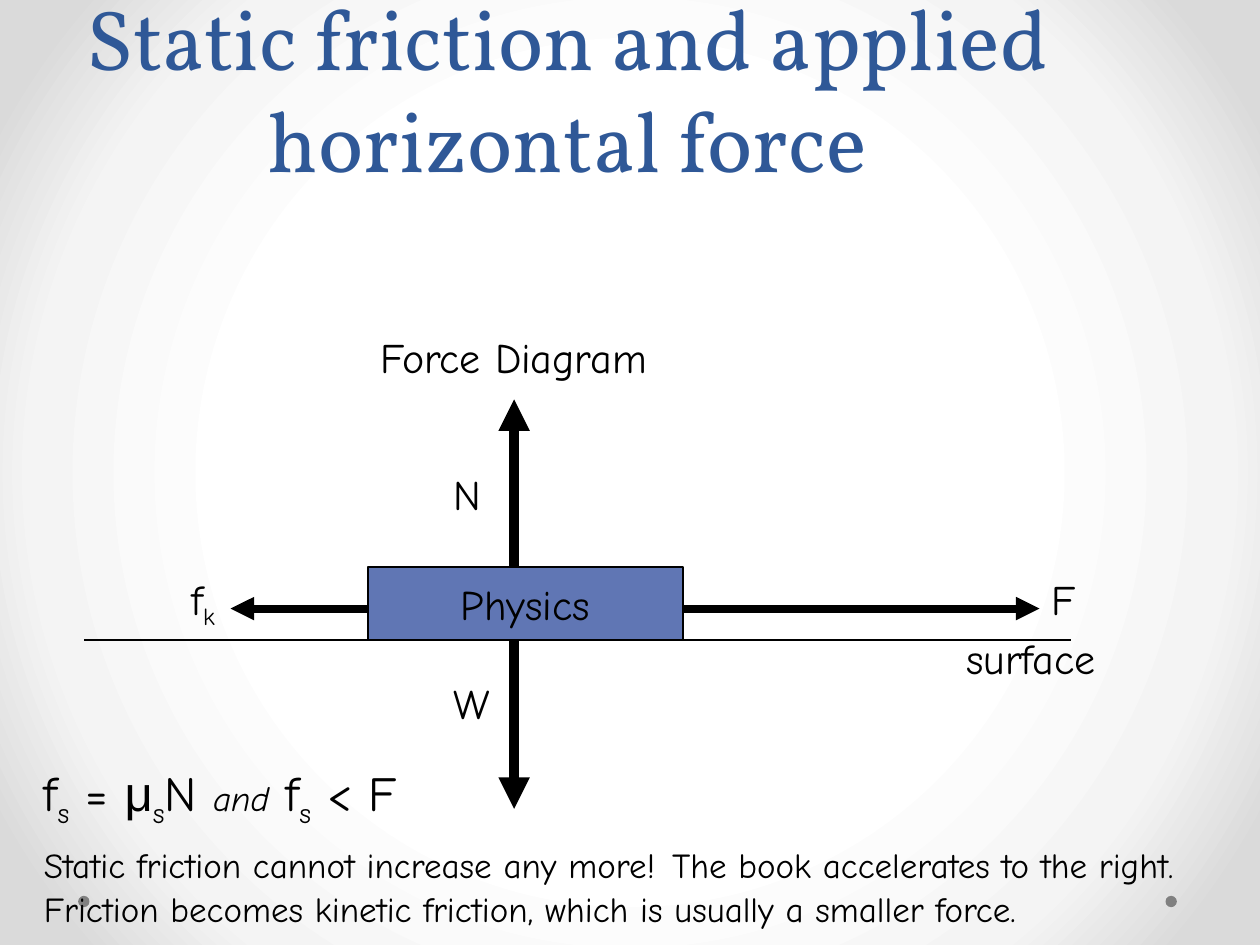
from lxml import etree
from pptx import Presentation
from pptx.dml.color import RGBColor
from pptx.enum.shapes import MSO_CONNECTOR as CONN, MSO_SHAPE as SHAPE
from pptx.enum.text import MSO_ANCHOR as ANCHOR, MSO_AUTO_SIZE as FIT, PP_ALIGN as ALIGN
from pptx.oxml import parse_xml
from pptx.oxml.ns import nsdecls, qn
from pptx.util import Inches, Pt

BLACK = RGBColor(0x00, 0x00, 0x00)
GRAY = RGBColor(0x80, 0x80, 0x80)
TITLE_BLUE = RGBColor(0x2F, 0x58, 0x97)
BOOK_BLUE = RGBColor(0x60, 0x76, 0xB4)
BACKDROP = [(50, "FFFFFF"), (76, "F4F4F4"), (92, "DADADA")]

SURFACE_Y, BOOK_TOP, BOOK_LEFT, BOOK_RIGHT = 5.08, 4.5, 2.92, 5.42
AXIS_X, FORCE_Y = 4.08, 4.83


def add_run(p, text, size=24, font="Comic Neue", color=BLACK, italic=False, sub=False):
    r = p.add_run()
    r.text = text
    r.font.size, r.font.name, r.font.italic = Pt(size), font, italic
    r.font.color.rgb = color
    if sub:
        r._r.get_or_add_rPr().set("baseline", "-25000")


class Diagram:
    """Holds the slide and the shape collection that new elements go into."""

    def __init__(self, s):
        self.s = s
        self.shapes = s.shapes

    def radial_background(self, stops):
        fill = self.s.background.fill
        fill.gradient()
        old = self.s.background._cSld.find(".//" + qn("a:gradFill"))
        gs = "".join(f'<a:gs pos="{pos * 1000}"><a:srgbClr val="{rgb}"/></a:gs>' for pos, rgb in stops)
        old.getparent().replace(old, parse_xml(
            f'<a:gradFill {nsdecls("a")} rotWithShape="1"><a:gsLst>{gs}</a:gsLst><a:path path="circle">'
            '<a:fillToRect l="50000" t="50000" r="50000" b="50000"/></a:path></a:gradFill>'))

    def text(self, x, y, w, h, paragraphs, wrap=False, anchor=ANCHOR.TOP, fit=FIT.SHAPE_TO_FIT_TEXT):
        """Each paragraph is a list of (text, format) runs."""
        tf = self.shapes.add_textbox(Inches(x), Inches(y), Inches(w), Inches(h)).text_frame
        tf.word_wrap, tf.vertical_anchor, tf.auto_size = wrap, anchor, fit
        for i, runs in enumerate(paragraphs):
            p = tf.paragraphs[0] if i == 0 else tf.add_paragraph()
            for text, fmt in runs:
                add_run(p, text, **fmt)
        return tf

    def label(self, x, y, w, text, sub=None):
        runs = [(text, {})] + ([(sub, {"sub": True})] if sub else [])
        self.text(x, y, w, 0.5, [runs])

    def shape(self, kind, x, y, w, h, fill, line=None):
        sp = self.shapes.add_shape(kind, Inches(x), Inches(y), Inches(w), Inches(h))
        sp.shadow.inherit = False
        sp.fill.solid()
        sp.fill.fore_color.rgb = fill
        if line is None:
            sp.line.fill.background()
        else:
            sp.line.color.rgb, sp.line.width = line, Pt(1.5)
        return sp

    def line(self, x1, y1, x2, y2, width, arrow=True):
        c = self.shapes.add_connector(CONN.STRAIGHT, Inches(x1), Inches(y1), Inches(x2), Inches(y2))
        c.line.color.rgb, c.line.width = BLACK, Pt(width)
        if arrow:
            etree.SubElement(c.line._get_or_add_ln(), qn("a:tailEnd"), type="triangle")
        etree.SubElement(c._element.spPr, qn("a:effectLst"))


def main():
    prs = Presentation()
    prs.slide_width, prs.slide_height = Inches(10), Inches(7.5)
    s = prs.slides.add_slide(prs.slide_layouts[6])
    d = Diagram(s)
    d.radial_background(BACKDROP)
    for x in (9.25, 0.62):
        d.shape(SHAPE.OVAL, x, 7.11, 0.09, 0.09, GRAY)

    title = d.text(0, 0.3, 9, 1.25, [[("Static friction and applied horizontal force",
                   {"size": 48.6, "font": "Vollkorn", "color": TITLE_BLUE})]],
                   wrap=True, anchor=ANCHOR.BOTTOM, fit=FIT.NONE)
    title.paragraphs[0].alignment = ALIGN.CENTER
    title.paragraphs[0].line_spacing = Pt(58)

    # Book with its vertical forces, as one group
    d.shapes = s.shapes.add_group_shape().shapes
    book = d.shape(SHAPE.RECTANGLE, BOOK_LEFT, BOOK_TOP, BOOK_RIGHT - BOOK_LEFT,
                   SURFACE_Y - BOOK_TOP, BOOK_BLUE, BLACK)
    tf = book.text_frame
    tf.word_wrap, tf.vertical_anchor = False, ANCHOR.MIDDLE
    tf.paragraphs[0].alignment = ALIGN.CENTER
    add_run(tf.paragraphs[0], "Physics")
    d.line(AXIS_X, SURFACE_Y, AXIS_X, 6.42, 6)
    d.line(AXIS_X, BOOK_TOP, AXIS_X, 3.17, 6)
    d.label(3.5, 3.67, 0.47, "N")
    d.label(3.5, 5.33, 0.55, "W")
    d.label(BOOK_LEFT, 2.58, 2.46, "Force Diagram")

    # Surface and horizontal forces
    d.shapes = s.shapes
    d.line(0.67, SURFACE_Y, 8.5, SURFACE_Y, 1.5, arrow=False)
    d.label(7.57, 4.97, 1.39, "surface")
    d.line(BOOK_RIGHT, FORCE_Y, 8.25, FORCE_Y, 4.5)
    d.label(8.25, BOOK_TOP, 0.4, "F")
    d.line(BOOK_LEFT, FORCE_Y, 1.83, FORCE_Y, 4.5)
    d.label(1.42, BOOK_TOP, 0.49, "f", sub="k")

    big, small = {"size": 28}, {"size": 20}
    sub = {"size": 28, "sub": True}
    d.text(0.25, 6, 9.75, 1.37, [
        [("f", big), ("s", sub), (" = ", big), ("μ", {"size": 28, "font": "Arial"}), ("s", sub),
         ("N ", big), ("and", {"size": 20, "italic": True}), (" f", big), ("s", sub), (" < F", big)],
        [("Static friction cannot increase any more!", small), (" ", big),
         ("The book accelerates to the right. Friction becomes kinetic friction, "
          "which is usually a smaller force.", small)],
    ], wrap=True)
    prs.save("out.pptx")


if __name__ == "__main__":
    main()
